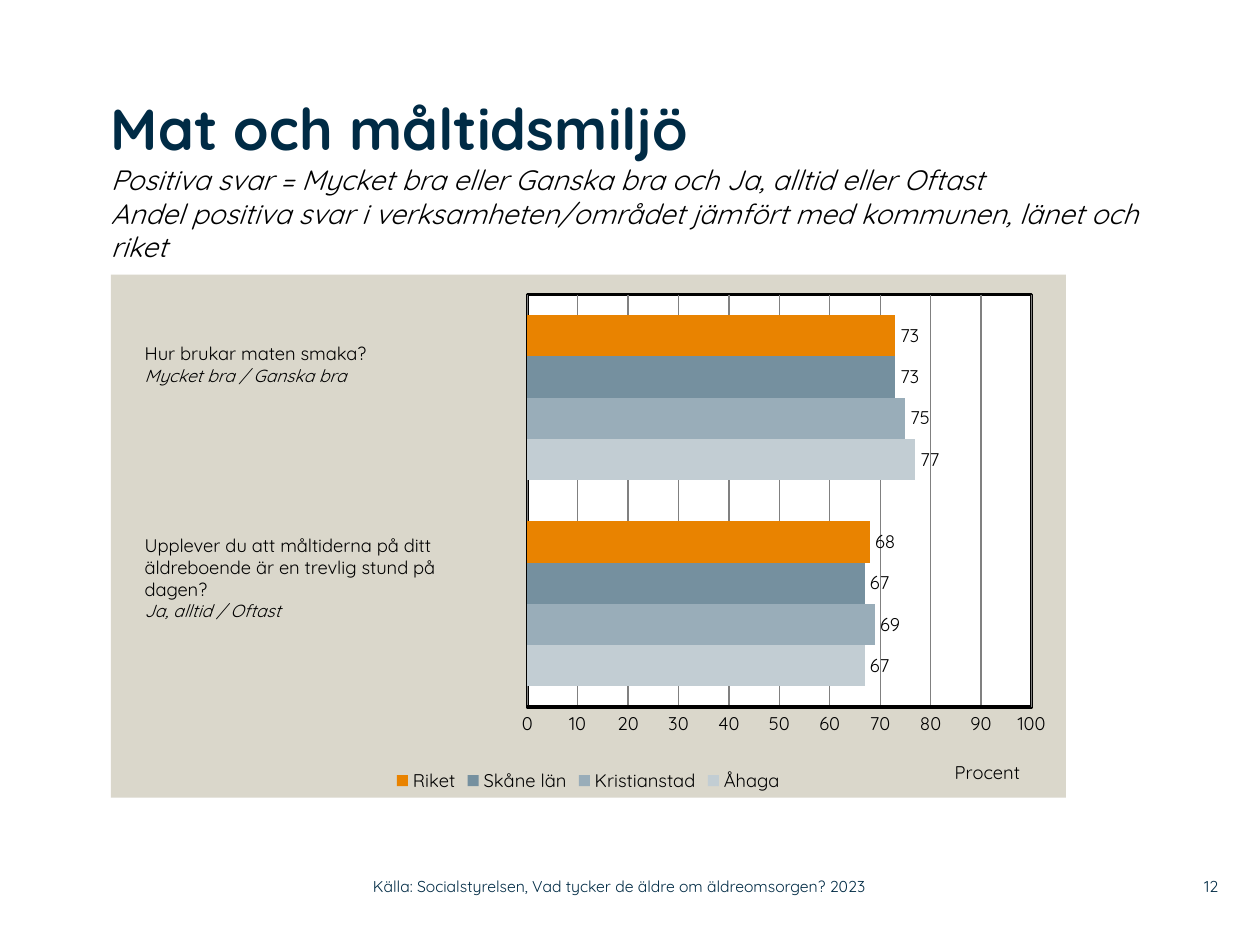
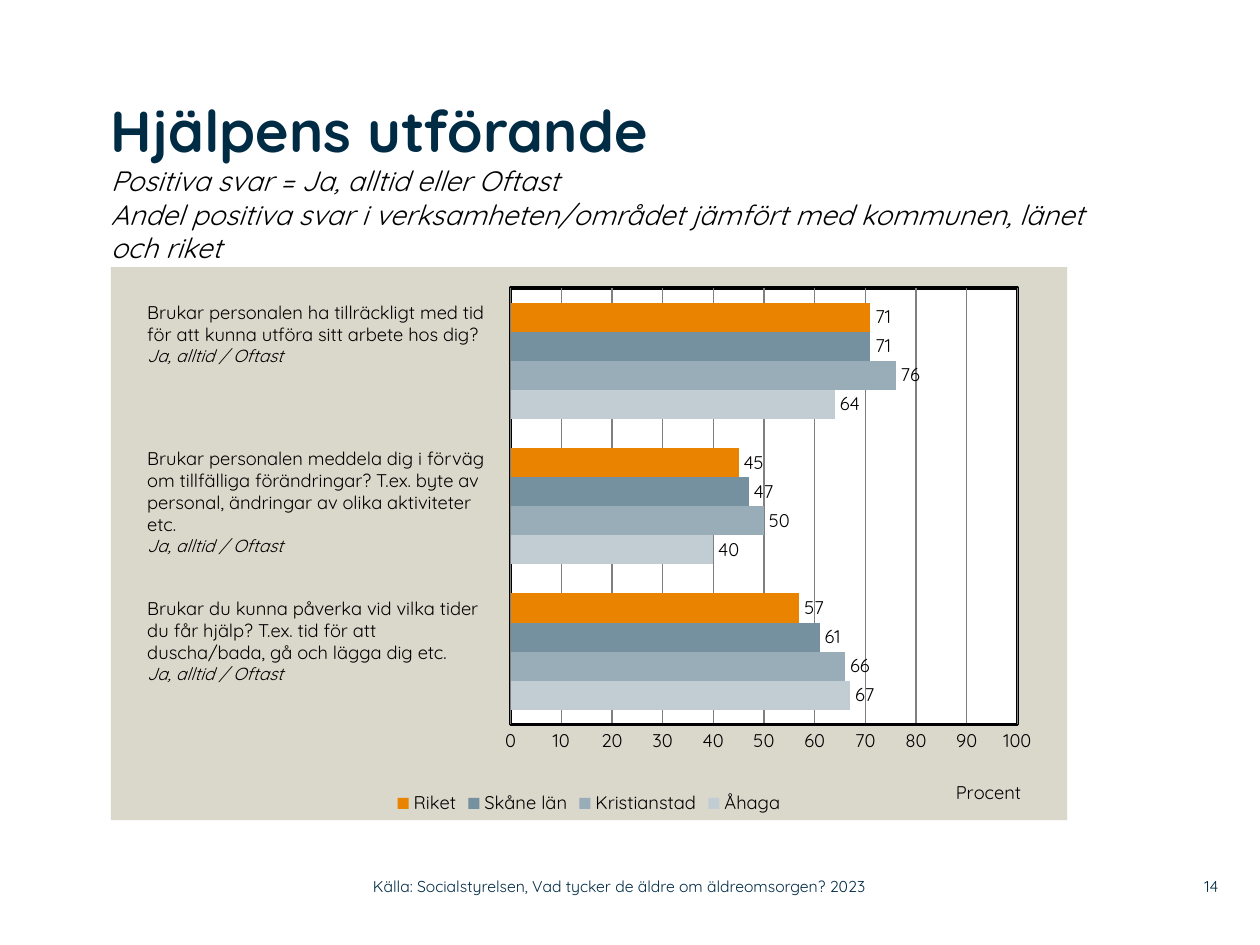
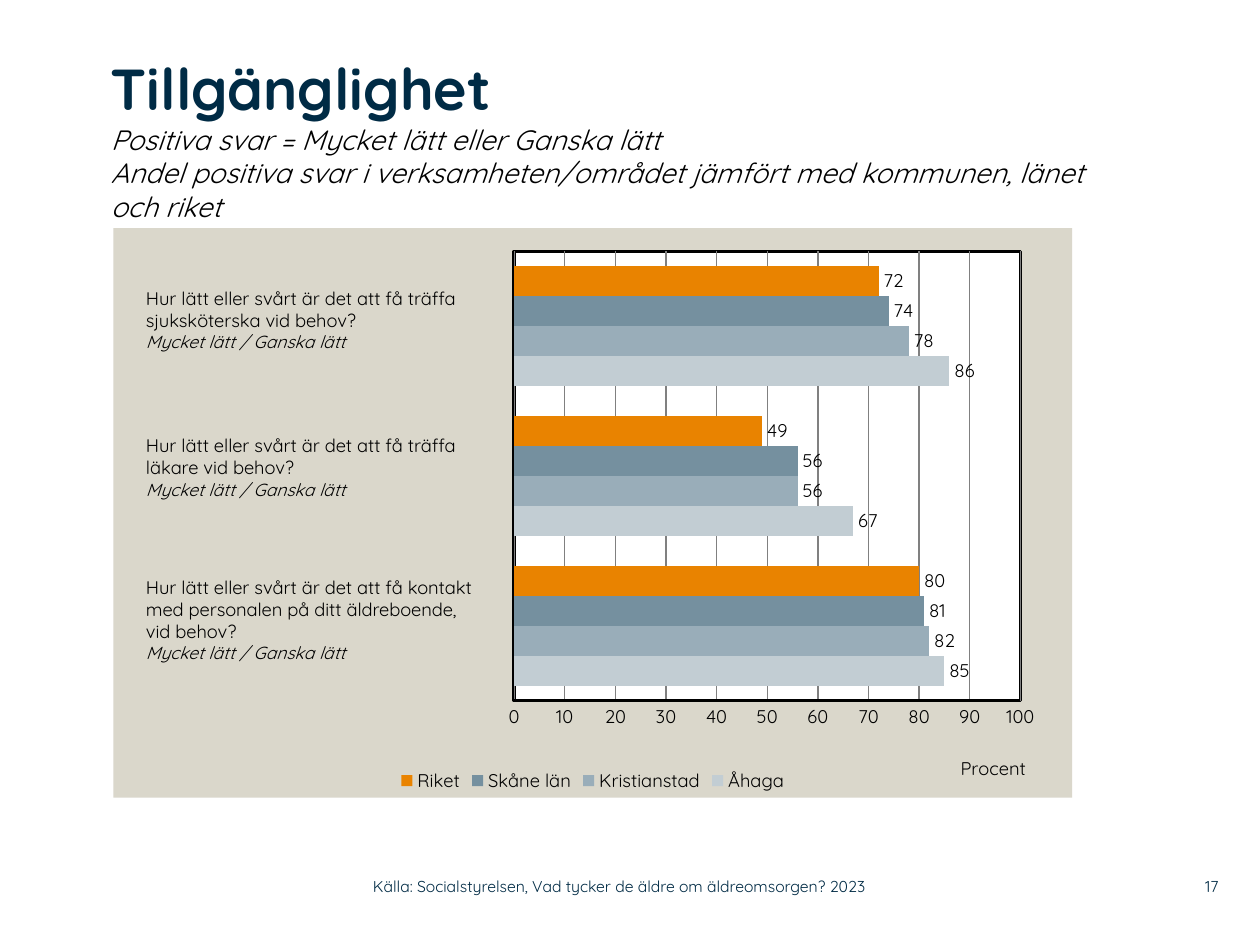
from dataclasses import dataclass

from lxml import etree
from pptx import Presentation
from pptx.chart.data import CategoryChartData
from pptx.dml.color import RGBColor
from pptx.enum.chart import XL_CHART_TYPE, XL_LABEL_POSITION, XL_LEGEND_POSITION, XL_TICK_MARK
from pptx.enum.text import MSO_ANCHOR, MSO_AUTO_SIZE, PP_ALIGN
from pptx.oxml import parse_xml
from pptx.oxml.ns import nsdecls, qn
from pptx.util import Inches, Pt

FONT = "Quicksand"
NAVY = RGBColor(0x00, 0x2B, 0x45)
BLACK = RGBColor(0x00, 0x00, 0x00)
WHITE = RGBColor(0xFF, 0xFF, 0xFF)
SAND = RGBColor(0xDA, 0xD7, 0xCB)
GRID_GREY = RGBColor(0x80, 0x80, 0x80)
AREA_COLORS = {
    "Åhaga": RGBColor(0xC2, 0xCD, 0xD3),
    "Kristianstad": RGBColor(0x99, 0xAD, 0xB9),
    "Skåne län": RGBColor(0x75, 0x90, 0x9F),
    "Riket": RGBColor(0xE9, 0x83, 0x00),
}

SLIDE_WIDTH, SLIDE_HEIGHT = Inches(10), Inches(7.5)
COLUMN, ROW = SLIDE_WIDTH / 100, SLIDE_HEIGHT / 75
PAGE_NUMBER_BOX = (92, 68.9, 4.7, 2.9)
SOURCE_BOX = (29.6, 68.9, 44.3, 2.9)
SOURCE = "Källa: Socialstyrelsen, Vad tycker de äldre om äldreomsorgen? 2023"
COMPARISON = "Andel positiva svar i verksamheten/området jämfört med kommunen, länet och riket"
UNIT_POSITION = (88, 92)


@dataclass
class Survey:
    page: int
    title: str
    positive: str
    title_box: tuple
    chart_box: tuple
    plot_share: tuple
    indent: float
    question_width: float
    answer: str
    questions: list
    results: dict


SURVEYS = [
    Survey(
        12, "Mat och måltidsmiljö",
        "Positiva svar = Mycket bra eller Ganska bra och Ja, alltid eller Oftast",
        (8.8, 7.4, 84.2, 14.4), (8.8, 21.8, 75.8, 41.5), (43.6, 3.8, 52.8, 78.9),
        1.7, 27.7, "Ja, alltid / Oftast",
        [
            (4.9, 6.3, ["Hur brukar maten smaka?"], "Mycket bra / Ganska bra"),
            (20.1, 9.8, ["Upplever du att måltiderna på ditt äldreboende är en trevlig stund på",
                         "dagen?"], None),
        ],
        {"Åhaga": (67, 77), "Kristianstad": (69, 75), "Skåne län": (67, 73), "Riket": (68, 73)},
    ),
    Survey(
        14, "Hjälpens utförande", "Positiva svar = Ja, alltid eller Oftast",
        (8.8, 7.5, 77.9, 12.1), (8.8, 21.2, 75.9, 43.9), (41.8, 3.8, 53, 78.9),
        1.9, 29.8, "Ja, alltid / Oftast",
        [
            (2.2, 8.1, ["Brukar personalen ha tillräckligt med tid",
                        "för att kunna utföra sitt arbete hos dig?"], None),
            (13.8, 9.8, ["Brukar personalen meddela dig i förväg om tillfälliga förändringar? "
                         "T.ex. byte av personal, ändringar av olika aktiviteter etc."], None),
            (25.7, 8.1, ["Brukar du kunna påverka vid vilka tider", "du får hjälp? T.ex. tid för att",
                         "duscha/bada, gå och lägga dig etc."], None),
        ],
        {"Åhaga": (67, 40, 64), "Kristianstad": (66, 50, 76),
         "Skåne län": (61, 47, 71), "Riket": (57, 45, 71)},
    ),
    Survey(
        17, "Tillgänglighet", "Positiva svar = Mycket lätt eller Ganska lätt",
        (8.8, 4.2, 77.7, 13.9), (9, 18.1, 76.1, 45.2), (41.8, 4.1, 52.8, 78.9),
        1.6, 29.8, "Mycket lätt / Ganska lätt",
        [
            (4.2, 8.1, ["Hur lätt eller svårt är det att få träffa sjuksköterska vid behov?"], None),
            (15.9, 8.1, ["Hur lätt eller svårt är det att få träffa", "läkare vid behov?"], None),
            (27.1, 9.8, ["Hur lätt eller svårt är det att få kontakt",
                         "med personalen på ditt äldreboende,", "vid behov?"], None),
        ],
        {"Åhaga": (85, 67, 86), "Kristianstad": (82, 56, 78),
         "Skåne län": (81, 56, 74), "Riket": (80, 49, 72)},
    ),
]


def on_grid(box):
    left, top, width, height = box
    return tuple(round(length) for length in (left * COLUMN, top * ROW, width * COLUMN, height * ROW))


def set_font(font, size, color, bold=False, italic=False):
    font.name, font.size, font.bold, font.italic = FONT, Pt(size), bold, italic
    font.color.rgb = color


def add_text(slide, box, lines, inset=True):
    frame = slide.shapes.add_textbox(*on_grid(box)).text_frame
    frame.word_wrap = True
    if not inset:
        frame.margin_left = frame.margin_top = frame.margin_right = frame.margin_bottom = 0
    frame.text = "\n".join(text for text, *_ in lines)
    for paragraph, (_, size, color, bold, italic) in zip(frame.paragraphs, lines):
        for run in paragraph.runs:
            set_font(run.font, size, color, bold, italic)
    return frame


def add_heading(slide, box, title, positive):
    add_text(slide, box, [
        (title, 33, NAVY, True, False),
        (positive, 16, BLACK, False, True),
        (COMPARISON, 16, BLACK, False, True),
    ], inset=False)


def add_footer(slide, page):
    for box, text, alignment in ((PAGE_NUMBER_BOX, str(page), PP_ALIGN.RIGHT),
                                 (SOURCE_BOX, SOURCE, PP_ALIGN.LEFT)):
        frame = add_text(slide, box, [(text, 9, NAVY, False, False)], inset=False)
        frame.vertical_anchor = MSO_ANCHOR.MIDDLE
        frame.paragraphs[0].alignment = alignment


def manual_layout(shares, inner=False):
    layout = parse_xml(f"<c:layout {nsdecls('c')}><c:manualLayout/></c:layout>")
    settings = [("layoutTarget", "inner")] if inner else []
    settings += [("xMode", "edge"), ("yMode", "edge")]
    settings += [(key, share / 100) for key, share in zip("xywh", shares)]
    for key, value in settings:
        etree.SubElement(layout[0], qn(f"c:{key}")).set("val", str(value))
    return layout


def replace_layout(parent, index, layout):
    for old in parent.findall(qn("c:layout")):
        parent.remove(old)
    parent.insert(index, layout)


def area_format(fill, line=None):
    outline = (f'<a:ln w="{Pt(2)}"><a:solidFill><a:srgbClr val="{line}"/></a:solidFill></a:ln>'
               if line is not None else "<a:ln><a:noFill/></a:ln>")
    return parse_xml(f'<c:spPr {nsdecls("c", "a")}><a:solidFill><a:srgbClr val="{fill}"/>'
                     f"</a:solidFill>{outline}</c:spPr>")


def style_value_axis(axis):
    axis.minimum_scale, axis.maximum_scale, axis.major_unit = 0, 100, 10
    axis.major_tick_mark = axis.minor_tick_mark = XL_TICK_MARK.NONE
    axis.format.line.color.rgb = BLACK
    axis.format.line.width = Pt(2)
    axis.has_major_gridlines = True
    axis.major_gridlines.format.line.color.rgb = GRID_GREY
    axis.major_gridlines.format.line.width = Pt(0.75)
    set_font(axis.tick_labels.font, 10.5, BLACK)
    unit = axis.axis_title.text_frame
    unit.text = "Procent"
    set_font(unit.paragraphs[0].runs[0].font, 10.5, BLACK)
    replace_layout(axis.axis_title.element, 1, manual_layout(UNIT_POSITION))


def add_result_chart(slide, box, plot_share, results):
    data = CategoryChartData()
    data.categories = [str(number + 1) for number in range(len(results["Riket"]))]
    for area, shares in results.items():
        data.add_series(area, shares)
    chart = slide.shapes.add_chart(XL_CHART_TYPE.BAR_CLUSTERED, *on_grid(box), data).chart
    set_font(chart.font, 10.5, BLACK)
    chart.has_title = False
    chart.has_legend = True
    chart.legend.position = XL_LEGEND_POSITION.BOTTOM
    chart.legend.include_in_layout = False
    set_font(chart.legend.font, 10.5, BLACK)
    chart.category_axis.visible = False
    style_value_axis(chart.value_axis)

    bars = chart.plots[0]
    bars.vary_by_categories = False
    bars.gap_width, bars.overlap = 100, 0
    for series in bars.series:
        series.format.fill.solid()
        series.format.fill.fore_color.rgb = AREA_COLORS[series.name]
        labels = series.data_labels
        labels.show_value = True
        labels.position = XL_LABEL_POSITION.OUTSIDE_END
        set_font(labels.font, 10.5, BLACK)

    chart_body = chart.element.find(qn("c:chart"))
    plot_area = chart_body.find(qn("c:plotArea"))
    replace_layout(plot_area, 0, manual_layout(plot_share, inner=True))
    plot_area.append(area_format(WHITE, BLACK))
    chart_body.addnext(area_format(SAND))


def add_questions(slide, box, survey):
    left, top, *_ = box
    for offset, height, wording, own_answer in survey.questions:
        lines = [(line, 10.5, BLACK, False, False) for line in wording]
        lines.append((own_answer or survey.answer, 10, BLACK, False, True))
        place = (left + survey.indent, top + offset, survey.question_width, height)
        add_text(slide, place, lines).auto_size = MSO_AUTO_SIZE.SHAPE_TO_FIT_TEXT


def add_survey_slide(deck, survey):
    slide = deck.slides.add_slide(deck.slide_layouts[6])
    add_result_chart(slide, survey.chart_box, survey.plot_share, survey.results)
    add_heading(slide, survey.title_box, survey.title, survey.positive)
    add_questions(slide, survey.chart_box, survey)
    add_footer(slide, survey.page)


def main():
    deck = Presentation()
    deck.slide_width, deck.slide_height = SLIDE_WIDTH, SLIDE_HEIGHT
    for survey in SURVEYS:
        add_survey_slide(deck, survey)
    deck.save("out.pptx")


if __name__ == "__main__":
    main()
